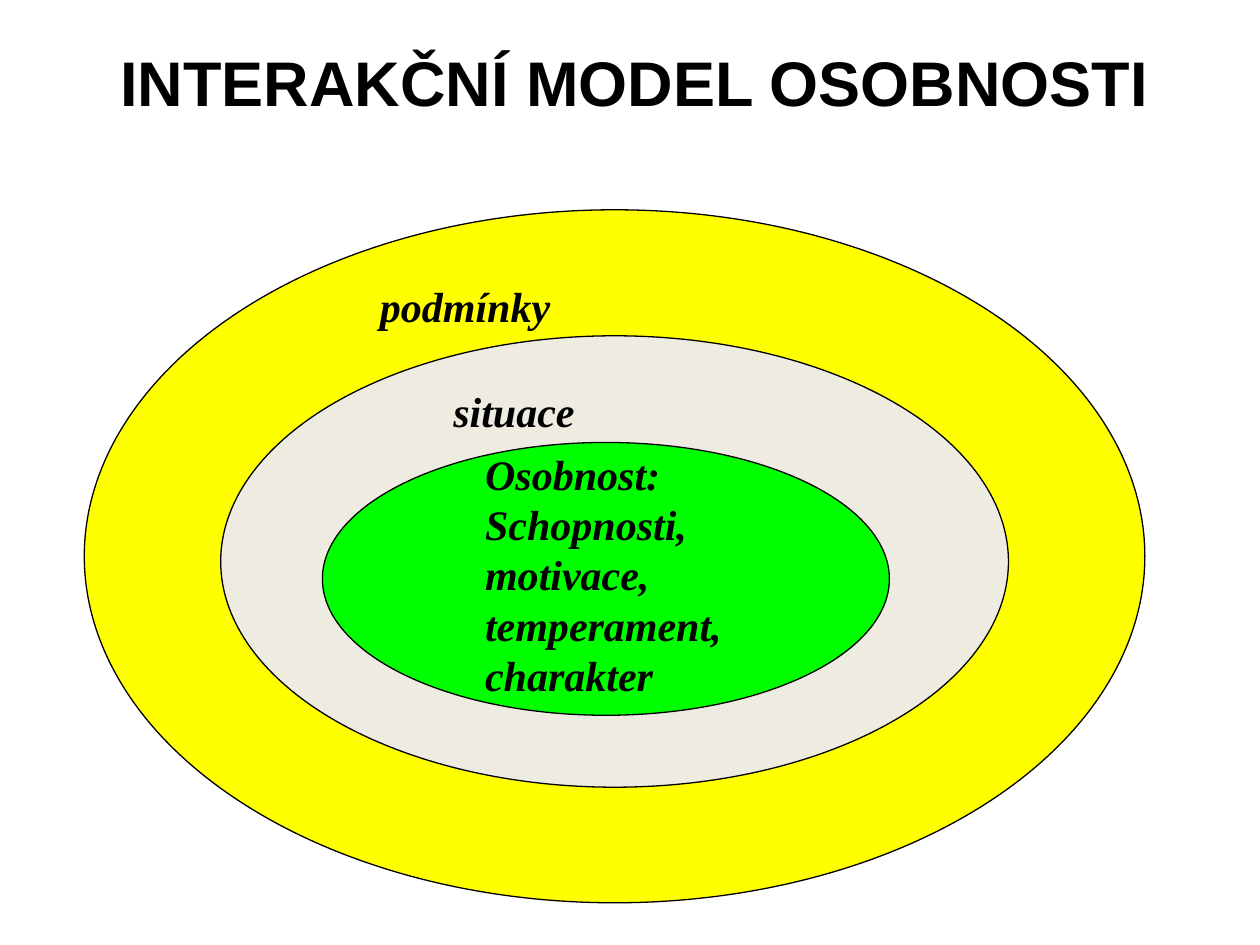
from pptx import Presentation
from pptx.dml.color import RGBColor
from pptx.enum.shapes import MSO_SHAPE
from pptx.enum.text import PP_ALIGN
from pptx.util import Cm, Pt

ELLIPSE = MSO_SHAPE.OVAL
LEFT, CENTER = PP_ALIGN.LEFT, PP_ALIGN.CENTER
BLACK, YELLOW, CREAM, GREEN = "000000", "FFFF00", "EEECE1", "00FF00"
HEADING = {"name": "Arial", "size": Pt(36), "bold": True}
LABEL = {"name": "Times New Roman", "size": Pt(24), "bold": True, "italic": True}
LINE_HEIGHT = 1.2


def color(value):
    return RGBColor.from_string(value)


class SlideBuilder:
    """Holds the current slide and its ink colour."""

    def __init__(self, page, ink=BLACK):
        self.page = page
        self.ink = ink

    def ring(self, left, top, width, height, fill):
        ellipse = self.page.shapes.add_shape(
            ELLIPSE, Cm(left), Cm(top), Cm(width), Cm(height))
        ellipse.shadow.inherit = False
        ellipse.fill.solid()
        ellipse.fill.fore_color.rgb = color(fill)
        ellipse.line.color.rgb = color(self.ink)
        ellipse.line.width = Pt(0.75)

    def text(self, left, top, width, height, wording, style, align=LEFT):
        box = self.page.shapes.add_textbox(
            Cm(left), Cm(top), Cm(width), Cm(height))
        box.text_frame.word_wrap = True
        para = box.text_frame.paragraphs[0]
        para.alignment = align
        para.line_spacing = Pt(style["size"].pt * LINE_HEIGHT)
        span = para.add_run()
        span.text = wording
        for attribute, value in style.items():
            setattr(span.font, attribute, value)
        span.font.color.rgb = color(self.ink)


def main():
    deck = Presentation()
    deck.slide_width, deck.slide_height = Cm(25.4), Cm(19.05)
    blank = deck.slide_layouts[6]
    builder = SlideBuilder(deck.slides.add_slide(blank))

    # Title
    builder.text(1.09, 0.75, 23.4, 1.78, "INTERAKČNÍ MODEL OSOBNOSTI",
                 HEADING, CENTER)

    # Outer ring: conditions
    builder.ring(1.7, 4.23, 21.38, 13.97, YELLOW)
    builder.text(7.41, 5.53, 4.45, 1.27, "podmínky", LABEL)

    # Middle ring: situation
    builder.ring(4.45, 6.77, 15.88, 9.1, CREAM)
    builder.text(8.89, 7.64, 6.15, 1.27, "situace", LABEL)

    # Core: personality
    builder.ring(6.5, 8.92, 11.43, 5.5, GREEN)
    builder.text(9.53, 8.91, 6.15, 5.33,
                 "Osobnost: Schopnosti, motivace, temperament, charakter", LABEL)

    deck.save("out.pptx")


if __name__ == "__main__":
    main()
